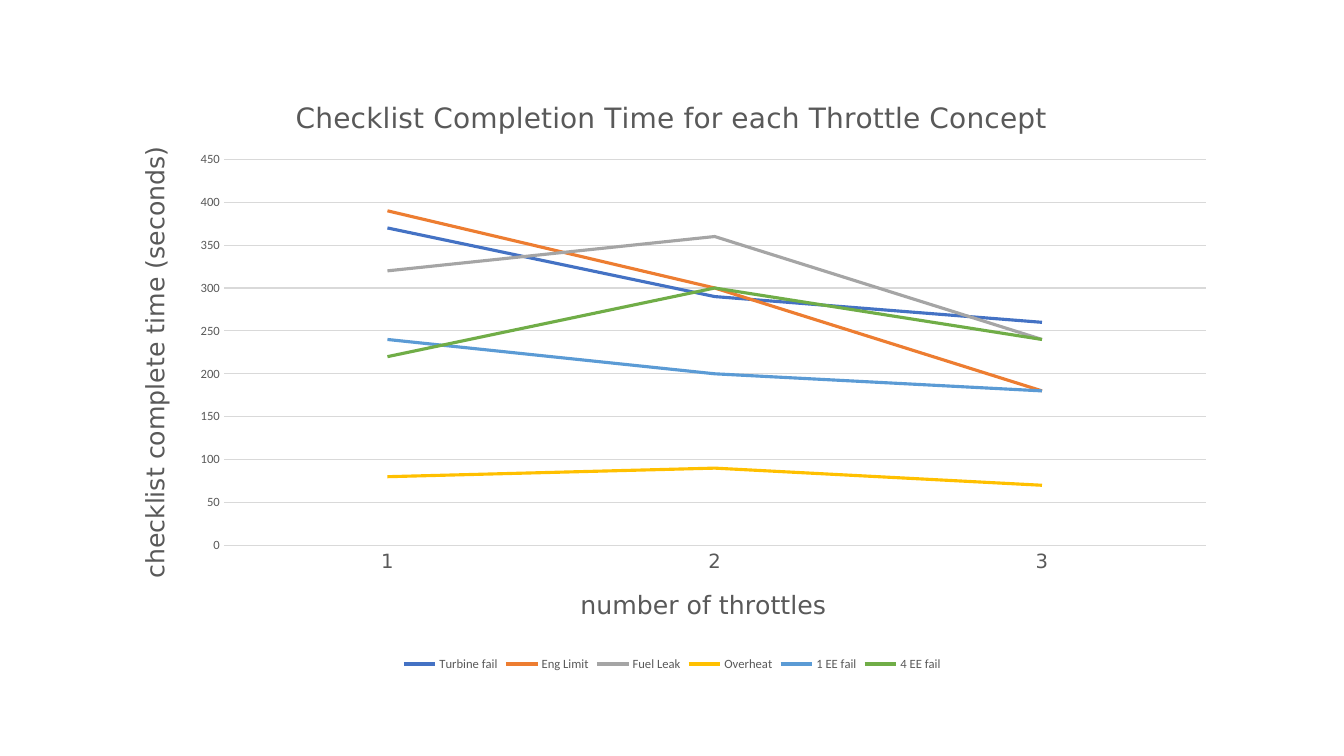
"""Build a slide with a line chart of checklist completion times."""
from dataclasses import dataclass
from typing import Any

from pptx import Presentation
from pptx import util as u
from pptx.chart import data as chart_data
from pptx.dml import color
from pptx.enum import chart as charts
from pptx.oxml import ns
from pptx.oxml import parse_xml


@dataclass(frozen=True)
class Theme:
    ink: str = "595959"
    grid: str = "D9D9D9"
    body_font: str = "Calibri"
    title_font: str = "DejaVu Sans"
    title_size: int = 20
    axis_title_size: int = 18
    category_size: int = 14
    small_size: int = 9
    grid_width: float = 0.75
    series_width: float = 2.25


@dataclass(frozen=True)
class Checklist:
    name: str
    seconds: tuple[int, ...]
    hue: str


@dataclass(frozen=True)
class Heading:
    words: str
    size: int
    left: float
    top: float
    rotation: int = 0


THEME = Theme()
THROTTLES = ("1", "2", "3")
CHECKLISTS = (
    Checklist("Turbine fail", (370, 290, 260), "4472C4"),
    Checklist("Eng Limit", (390, 300, 180), "ED7D31"),
    Checklist("Fuel Leak", (320, 360, 240), "A5A5A5"),
    Checklist("Overheat", (80, 90, 70), "FFC000"),
    Checklist("1 EE fail", (240, 200, 180), "5B9BD5"),
    Checklist("4 EE fail", (220, 300, 240), "70AD47"),
)
CHART_HEADING = Heading("Checklist Completion Time for each Throttle Concept",
                        THEME.title_size, 15.7, 2.3)
CATEGORY_HEADING = Heading("number of throttles", THEME.axis_title_size, 41.35, 84.65)
VALUE_HEADING = Heading("checklist complete time (seconds)",
                        THEME.axis_title_size, 1.6, 10.35, -90)


def style_font(font: Any, size: int, family: str) -> None:
    """Set size, family and the common text colour."""
    font.size = u.Pt(size)
    font.name = family
    font.bold = False
    font.color.rgb = color.RGBColor.from_string(THEME.ink)


def style_line(line: Any, hue: str, width: float) -> None:
    """Set the colour and width of a line."""
    line.color.rgb = color.RGBColor.from_string(hue)
    line.width = u.Pt(width)


def place(parent: Any, index: int, target: str, **percents: float) -> None:
    """Give a chart part a fixed layout in percent of the chart."""
    for previous in parent.findall(ns.qn("c:layout")):
        parent.remove(previous)
    inner = f'<c:layoutTarget val="{target}"/>' if target else ""
    modes = '<c:xMode val="edge"/><c:yMode val="edge"/>'
    numbers = "".join(f'<c:{key} val="{value / 100:.4f}"/>' for key, value in percents.items())
    parent.insert(index, parse_xml(
        f'<c:layout {ns.nsdecls("c")}><c:manualLayout>{inner}{modes}{numbers}'
        "</c:manualLayout></c:layout>"))


def write_heading(title: Any, heading: Heading) -> None:
    """Write a chart or axis title and place it."""
    span = title.text_frame.paragraphs[0].add_run()
    span.text = heading.words
    style_font(span.font, heading.size, THEME.title_font)
    frame = title.element.find(".//" + ns.qn("a:bodyPr"))
    frame.set("rot", str(heading.rotation * 60000))
    frame.set("vert", "horz")
    place(title.element, 1, "", x=heading.left, y=heading.top)


def style_axis(axis: Any, heading: Heading, size: int, family: str) -> None:
    """Style the labels and title of an axis."""
    axis.major_tick_mark = charts.XL_TICK_MARK.NONE
    axis.minor_tick_mark = charts.XL_TICK_MARK.NONE
    style_font(axis.tick_labels.font, size, family)
    write_heading(axis.axis_title, heading)


def add_checklist_chart(page: Any) -> None:
    """Add the line chart with its axes, titles and legend."""
    table = chart_data.CategoryChartData()
    table.categories = THROTTLES
    for checklist in CHECKLISTS:
        table.add_series(checklist.name, checklist.seconds)
    chart = page.shapes.add_chart(
        charts.XL_CHART_TYPE.LINE, u.Cm(2.92), u.Cm(2.03),
        u.Cm(28.04), u.Cm(14.99), table).chart
    style_font(chart.font, THEME.small_size, THEME.body_font)
    chart.has_title = True
    write_heading(chart.chart_title, CHART_HEADING)

    plot = chart.plots[0]
    plot.vary_by_categories = False
    for series, checklist in zip(plot.series, CHECKLISTS):
        series.smooth = False
        series.marker.style = charts.XL_MARKER_STYLE.NONE
        style_line(series.format.line, checklist.hue, THEME.series_width)
    place(chart.element.find(".//" + ns.qn("c:plotArea")), 0, "inner",
          x=9.7, y=13.25, w=88.25, h=64.9)

    style_axis(chart.category_axis, CATEGORY_HEADING, THEME.category_size, THEME.title_font)
    style_line(chart.category_axis.format.line, THEME.grid, THEME.grid_width)
    values = chart.value_axis
    style_axis(values, VALUE_HEADING, THEME.small_size, THEME.body_font)
    values.minimum_scale, values.maximum_scale, values.major_unit = 0, 450, 50
    values.format.line.fill.background()
    values.has_major_gridlines = True
    style_line(values.major_gridlines.format.line, THEME.grid, THEME.grid_width)

    chart.has_legend = True
    chart.legend.position = charts.XL_LEGEND_POSITION.BOTTOM
    chart.legend.include_in_layout = False
    style_font(chart.legend.font, THEME.small_size, THEME.body_font)


def main() -> None:
    """Create the deck and save it."""
    deck = Presentation()
    deck.slide_width, deck.slide_height = u.Cm(33.87), u.Cm(19.05)
    page = deck.slides.add_slide(deck.slide_layouts[6])
    add_checklist_chart(page)
    deck.save("out.pptx")


if __name__ == "__main__":
    main()
